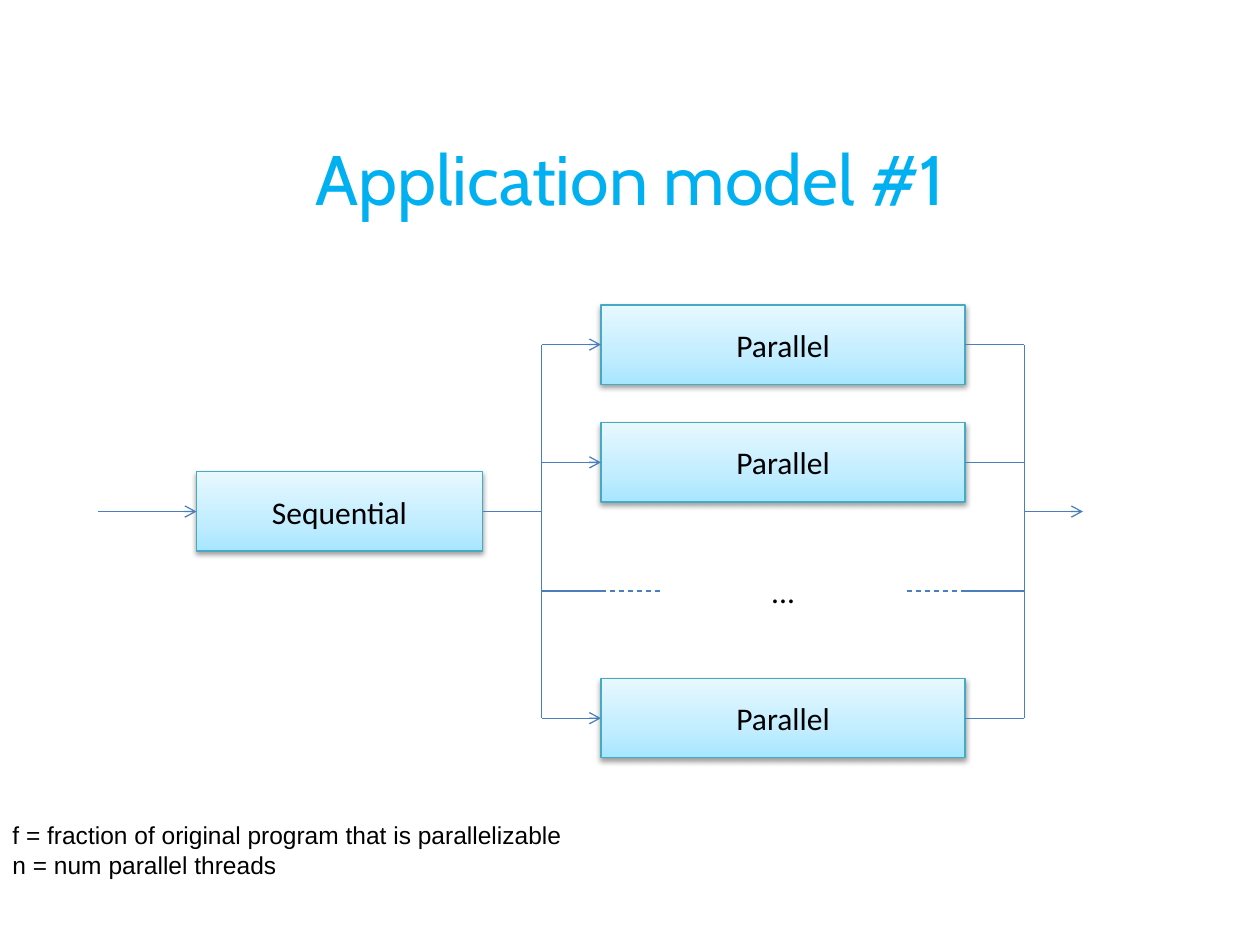
from lxml import etree
from pptx import Presentation
from pptx.dml.color import RGBColor
from pptx.enum import dml, shapes, text
from pptx.oxml.ns import qn
from pptx.util import Inches, Pt

TITLE = "Application model #1"
NOTES = ["f = fraction of original program that is parallelizable",
         "n = num parallel threads"]
PARALLEL_ROWS = [2.735, 3.67, 5.7]  # centre heights of the branches
DOTS_ROW = 4.69
MAIN_ROW = 4.06

BOX_HEIGHT = 0.63
SEQUENTIAL_LEFT, SEQUENTIAL_WIDTH = 1.56, 2.27
PARALLEL_LEFT, PARALLEL_WIDTH = 4.77, 2.89
SEQUENTIAL_RIGHT = SEQUENTIAL_LEFT + SEQUENTIAL_WIDTH
PARALLEL_RIGHT = PARALLEL_LEFT + PARALLEL_WIDTH
FORK, JOIN = 4.3, 8.13
STUB = 0.465  # length of the short lines beside the boxes

BLACK = RGBColor(0x00, 0x00, 0x00)
TITLE_BLUE = RGBColor(0x00, 0xB0, 0xF0)
LINE_BLUE = RGBColor(0x4B, 0x7E, 0xBC)
BORDER_BLUE = RGBColor(0x46, 0xAA, 0xC5)
GRADIENT = [(0, RGBColor(0xA7, 0xE6, 0xFF)),
            (35, RGBColor(0xC1, 0xED, 0xFF)),
            (100, RGBColor(0xE7, 0xF8, 0xFF))]


def add_node(parent, tag, **attributes):
    node = etree.SubElement(parent, qn(tag))
    for name, value in attributes.items():
        node.set(name, str(value))
    return node


def write(shape, lines, size, font, color=BLACK, align=text.PP_ALIGN.CENTER,
          anchor=text.MSO_ANCHOR.MIDDLE, wrap=True):
    frame = shape.text_frame
    frame.text = "\n".join(lines)
    frame.word_wrap = wrap
    frame.vertical_anchor = anchor
    for para in frame.paragraphs:
        para.alignment = align
        for span in para.runs:
            span.font.size = Pt(size)
            span.font.name = font
            span.font.color.rgb = color


def add_text(page, left, top, width, height, lines, size, font, **style):
    box = page.shapes.add_textbox(*map(Inches, (left, top, width, height)))
    write(box, lines, size, font, **style)
    return box


def add_box(page, left, middle, width, label):
    """Add a gradient box with a soft shadow, centred on a row."""
    box = page.shapes.add_shape(
        shapes.MSO_SHAPE.RECTANGLE, Inches(left), Inches(middle - BOX_HEIGHT / 2),
        Inches(width), Inches(BOX_HEIGHT))
    box.fill.gradient()
    box.fill.gradient_angle = 90
    stops = box._element.spPr.find(".//" + qn("a:gsLst"))
    for stop in list(stops):
        stops.remove(stop)
    for position, color in GRADIENT:
        stop = add_node(stops, "a:gs", pos=position * 1000)
        add_node(stop, "a:srgbClr", val=color)
    box.line.color.rgb = BORDER_BLUE
    box.line.width = Pt(0.75)
    box.shadow.inherit = False
    effects = box._element.spPr.find(qn("a:effectLst"))
    shadow = add_node(effects, "a:outerShdw", blurRad=Pt(3.1), dist=Pt(1.6),
                      dir=90 * 60000, rotWithShape=0)
    add_node(add_node(shadow, "a:srgbClr", val=BLACK), "a:alpha", val=38000)
    write(box, [label], 18, "Calibri")


def add_line(page, x1, y1, x2, y2, arrow=False, dashed=False):
    line = page.shapes.add_connector(
        shapes.MSO_CONNECTOR.STRAIGHT, *map(Inches, (x1, y1, x2, y2)))
    line.line.color.rgb = LINE_BLUE
    line.line.width = Pt(0.75)
    if dashed:
        line.line.dash_style = dml.MSO_LINE.DASH
    if arrow:
        add_node(line.line._get_or_add_ln(), "a:tailEnd", type="arrow")
    add_node(line._element.spPr, "a:effectLst")


def main():
    deck = Presentation()
    deck.slide_width, deck.slide_height = Inches(10), Inches(7.5)
    page = deck.slides.add_slide(deck.slide_layouts[6])

    add_text(page, 0.5, 0.78, 9, 1.25, [TITLE], 40, "Cabin", color=TITLE_BLUE)

    add_box(page, SEQUENTIAL_LEFT, MAIN_ROW, SEQUENTIAL_WIDTH, "Sequential")
    add_line(page, SEQUENTIAL_LEFT / 2, MAIN_ROW, SEQUENTIAL_LEFT, MAIN_ROW, arrow=True)
    add_line(page, SEQUENTIAL_RIGHT, MAIN_ROW, FORK, MAIN_ROW)
    add_line(page, JOIN, MAIN_ROW, JOIN + STUB, MAIN_ROW, arrow=True)

    for row in PARALLEL_ROWS:
        add_box(page, PARALLEL_LEFT, row, PARALLEL_WIDTH, "Parallel")
        add_line(page, FORK, row, PARALLEL_LEFT, row, arrow=True)
        add_line(page, PARALLEL_RIGHT, row, JOIN, row)
    for rail in (FORK, JOIN):
        add_line(page, rail, PARALLEL_ROWS[-1], rail, PARALLEL_ROWS[0])

    add_text(page, PARALLEL_LEFT, DOTS_ROW - BOX_HEIGHT / 2, PARALLEL_WIDTH,
             BOX_HEIGHT, ["..."], 18, "Calibri")
    add_line(page, FORK, DOTS_ROW, PARALLEL_LEFT, DOTS_ROW)
    add_line(page, PARALLEL_LEFT, DOTS_ROW, PARALLEL_LEFT + STUB, DOTS_ROW, dashed=True)
    add_line(page, PARALLEL_RIGHT - STUB, DOTS_ROW, PARALLEL_RIGHT, DOTS_ROW, dashed=True)
    add_line(page, PARALLEL_RIGHT, DOTS_ROW, JOIN, DOTS_ROW)

    notes = add_text(page, 0, 6.46, 4.58, 0.57, NOTES, 14, "Arial", wrap=False,
                     align=text.PP_ALIGN.LEFT, anchor=text.MSO_ANCHOR.TOP)
    notes.text_frame.auto_size = text.MSO_AUTO_SIZE.SHAPE_TO_FIT_TEXT

    deck.save("out.pptx")


if __name__ == "__main__":
    main()
